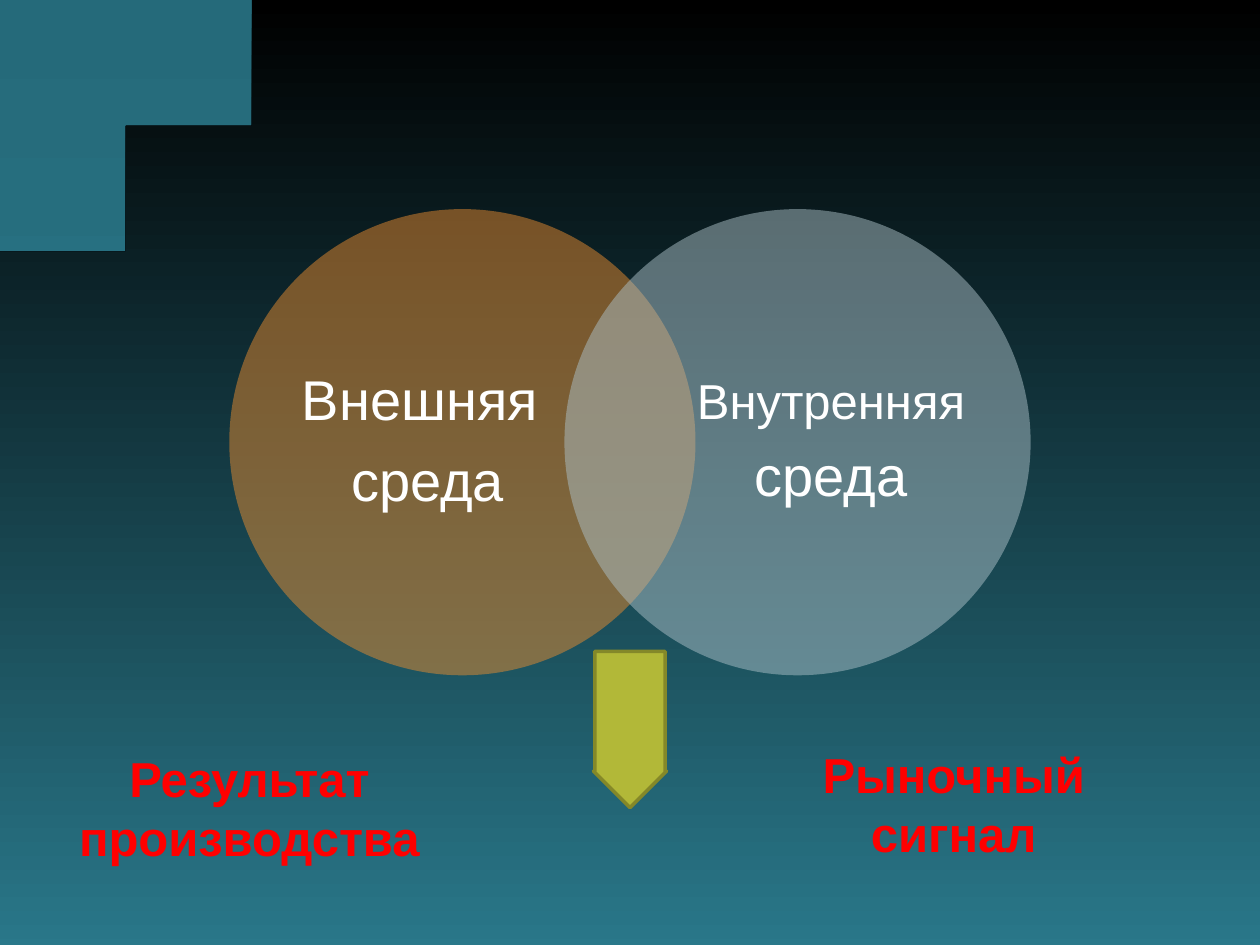
import dataclasses

import lxml.etree
import pptx
import pptx.dml.color
import pptx.enum.shapes
import pptx.enum.text
import pptx.oxml.ns
import pptx.util

Inches = pptx.util.Inches
Pt = pptx.util.Pt
Kind = pptx.enum.shapes.MSO_SHAPE
qn = pptx.oxml.ns.qn


@dataclasses.dataclass(frozen=True)
class Theme:
    font: str = "Arial"
    large: int = 32
    small: int = 28
    white: str = "FFFFFF"
    red: str = "FF0000"
    black: str = "000000"
    deep: str = "256A7A"
    teal: str = "2C7F92"
    orange: str = "E68B30"
    grey: str = "ACC0C7"
    lime: str = "B2B838"
    olive: str = "848829"


@dataclasses.dataclass(frozen=True)
class Circle:
    left: float
    inset: float
    color: str
    size: int
    title: str


@dataclasses.dataclass(frozen=True)
class Label:
    left: float
    top: float
    text: str


THEME = Theme()
CIRCLES = [
    Circle(1.82, 0.51, THEME.orange, THEME.large, "Внешняя "),
    Circle(4.48, 1.05, THEME.grey, THEME.small, "Внутренняя "),
]
LABELS = [
    Label(0.43, 5.49, "Результат производства"),
    Label(6.02, 5.46, "Рыночный сигнал"),
]
# Cubic curves of the panel edge: two controls and an end each
START = (2.58, 0)
CURVES = [
    ((1.9, 0.16), (1.16, 0.83), (0.98, 1.07)),
    ((0.8, 1.32), (0.16, 1.94), (0, 3.01)),
]


def rgb(code: str) -> pptx.dml.color.RGBColor:
    return pptx.dml.color.RGBColor.from_string(code)


def shade(fill, first: str, last: str) -> None:
    """Fill from top to bottom."""
    fill.gradient()
    fill.gradient_angle = 270
    for stop, code in zip(fill.gradient_stops, (first, last)):
        stop.color.rgb = rgb(code)


def write(para, text: str, *, size: int, color: str, bold: bool = False,
          line: float | None = None, after: int | None = None) -> None:
    """Write one centred paragraph; after is a percentage of the line."""
    para.alignment = pptx.enum.text.PP_ALIGN.CENTER
    if line:
        para.line_spacing = line
    if after:
        para.space_after = Pt(0)
        gap = para._p.pPr.find(qn("a:spcAft"))
        gap.remove(gap[0])
        lxml.etree.SubElement(gap, qn("a:spcPct"), val=str(after * 1000))
    run = para.add_run()
    run.text = text
    run.font.name = THEME.font
    run.font.size = Pt(size)
    run.font.bold = bold
    run.font.color.rgb = rgb(color)


def add_shape(slide, kind, left: float, top: float, wide: float, high: float):
    shape = slide.shapes.add_shape(
        kind, Inches(left), Inches(top), Inches(wide), Inches(high))
    shape.shadow.inherit = False
    shape.line.fill.background()
    return shape


def curve(start, first, second, end, steps: int = 24) -> list:
    """Points along a cubic curve, without its start."""
    points = []
    for step in range(1, steps + 1):
        t = step / steps
        u = 1 - t
        points.append(tuple(
            u**3 * a + 3 * u * u * t * b + 3 * u * t * t * c + t**3 * d
            for a, b, c, d in zip(start, first, second, end)))
    return points


def add_panel(slide) -> None:
    points, last = [], START
    for part in CURVES:
        points += curve(last, *part)
        last = part[-1]
    points += [(0, 7.5), (10, 7.5), (10, 0)]
    form = slide.shapes.build_freeform(*START, scale=Inches(1))
    form.add_line_segments(points, close=True)
    panel = form.convert_to_shape()
    panel.shadow.inherit = False
    panel.line.fill.background()
    shade(panel.fill, THEME.black, THEME.teal)


def add_circle(slide, item: Circle) -> None:
    disc = add_shape(slide, Kind.OVAL, item.left, 1.66, 3.7, 3.7)
    disc.fill.solid()
    disc.fill.fore_color.rgb = rgb(item.color)
    tint = disc._element.spPr.find(qn("a:solidFill"))[0]
    lxml.etree.SubElement(tint, qn("a:alpha"), val="50000")

    box = slide.shapes.add_textbox(
        Inches(item.left + item.inset), Inches(2.1), Inches(2.13), Inches(2.83))
    frame = box.text_frame
    frame.word_wrap = True
    frame.vertical_anchor = pptx.enum.text.MSO_ANCHOR.MIDDLE
    frame.margin_left = frame.margin_right = 0
    frame.margin_top = frame.margin_bottom = 0
    look = {"color": THEME.white, "line": 0.9, "after": 35}
    write(frame.paragraphs[0], item.title, size=item.size, **look)
    write(frame.add_paragraph(), "среда", size=THEME.large, **look)


def add_arrow(slide) -> None:
    arrow = add_shape(slide, Kind.DOWN_ARROW, 4.71, 5.17, 0.58, 1.24)
    arrow.adjustments[0] = 0.96
    arrow.adjustments[1] = 0.5
    arrow.fill.solid()
    arrow.fill.fore_color.rgb = rgb(THEME.lime)
    arrow.line.color.rgb = rgb(THEME.olive)
    arrow.line.width = Pt(2)


def add_label(slide, item: Label) -> None:
    box = add_shape(
        slide, Kind.ROUNDED_RECTANGLE, item.left, item.top, 3.1, 1.84)
    box.adjustments[0] = 0.09
    box.fill.background()
    frame = box.text_frame
    frame.word_wrap = True
    frame.vertical_anchor = pptx.enum.text.MSO_ANCHOR.MIDDLE
    write(frame.paragraphs[0], item.text,
          size=THEME.small, color=THEME.red, bold=True)


def main() -> None:
    deck = pptx.Presentation()
    deck.slide_width = Inches(10)
    deck.slide_height = Inches(7.5)
    slide = deck.slides.add_slide(deck.slide_layouts[6])

    # Backdrop
    shade(slide.background.fill, THEME.deep, THEME.teal)
    add_panel(slide)

    # Overlapping circles and the arrow below them
    for item in CIRCLES:
        add_circle(slide, item)
    add_arrow(slide)

    # Outcomes
    for item in LABELS:
        add_label(slide, item)

    deck.save("out.pptx")


if __name__ == "__main__":
    main()
